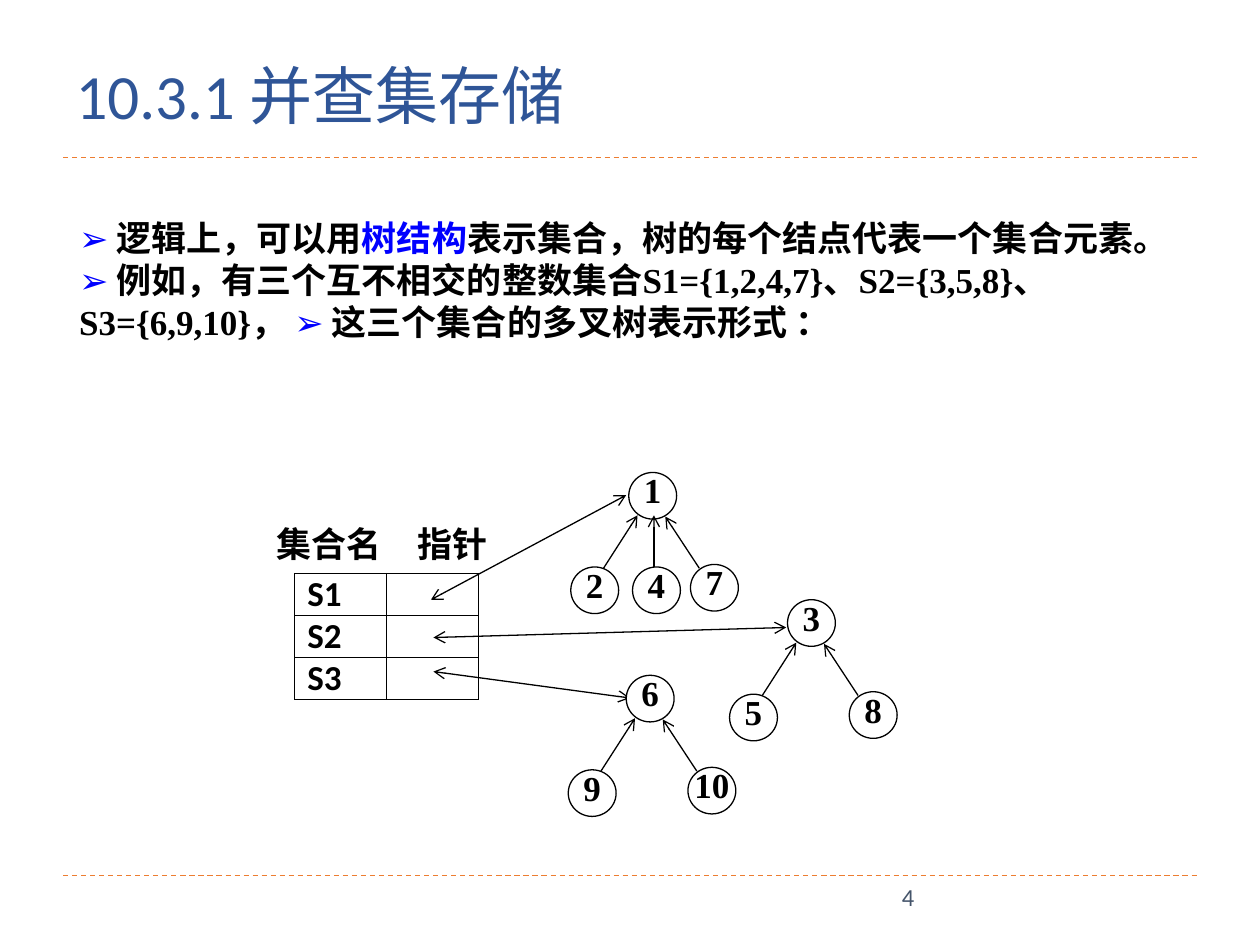
from lxml.etree import SubElement
from pptx import Presentation
from pptx.dml.color import RGBColor
from pptx.enum.dml import MSO_LINE
from pptx.enum.shapes import MSO_CONNECTOR, MSO_SHAPE
from pptx.enum.text import MSO_ANCHOR, PP_ALIGN
from pptx.oxml.ns import qn
from pptx.util import Inches, Pt

BLACK, BLUE, WHITE = "000000", "0000FF", "FFFFFF"
SERIF, SANS, CJK = "Times New Roman", "Calibri", "Noto Sans CJK SC"

TITLE = "10.3.1 并查集存储"
BODY = [
    [("➢ ", BLUE), ("逻辑上，可以用", BLACK), ("树结构", BLUE),
     ("表示集合，树的每个结点代表一个集合元素。", BLACK)],
    [("➢ ", BLUE),
     ("例如，有三个互不相交的整数集合S1={1,2,4,7}、S2={3,5,8}、S3={6,9,10}，", BLACK),
     (" ➢ ", BLUE), ("这三个集合的多叉树表示形式 ：", BLACK)],
]
PAGE = "4"
RULES = [1.25, 6.95]
HEADINGS = [("集合名", 2.11, 1.01), ("指针", 3.2, 0.78)]
SETS = ["S1", "S2", "S3"]
POINTERS = [
    (3.42, 4.76, 4.97, 3.93),
    (3.44, 5.06, 6.24, 4.98),
    (3.44, 5.33, 5, 5.54),
]
TREES = [
    ("1", 4.99, 3.75, {"left": "2", "middle": "4", "right": "7"}),
    ("3", 6.25, 4.76, {"left": "5", "right": "8"}),
    ("6", 4.97, 5.36, {"left": "9", "right": "10"}),
]
CHILD_OFFSETS = {"left": (-0.46, 0.75), "middle": (0.03, 0.75), "right": (0.49, 0.73)}
EDGE_OFFSETS = {
    "left": (0.07, 0.34, -0.2, 0.76),
    "middle": (0.2, 0.34, 0.2, 0.75),
    "right": (0.29, 0.35, 0.56, 0.76),
}


def rgb(color):
    return RGBColor.from_string(color)


def write(p, text, size=20, name=SERIF, color=BLACK, bold=True):
    r = p.add_run()
    r.text = text
    for key, value in {"size": Pt(size), "name": name, "bold": bold}.items():
        setattr(r.font, key, value)
    r.font.color.rgb = rgb(color)
    SubElement(r.font._element, qn("a:ea"), typeface=SANS)


def set_frame(tf, **formats):
    for key, value in formats.items():
        setattr(tf, key, value)
    return tf


def no_margins():
    return {f"margin_{side}": 0 for side in ("left", "right", "top", "bottom")}


def add_text(s, x, y, w, h, **formats):
    box = s.shapes.add_textbox(Inches(x), Inches(y), Inches(w), Inches(h))
    return set_frame(box.text_frame, word_wrap=True, **formats)


def add_line(s, x1, y1, x2, y2, color=BLACK, ends=(), dash=None):
    line = s.shapes.add_connector(
        MSO_CONNECTOR.STRAIGHT, Inches(x1), Inches(y1), Inches(x2), Inches(y2))
    line.line.color.rgb = rgb(color)
    line.line.width = Pt(0.75)
    if dash:
        line.line.dash_style = dash
    for end in ends:
        SubElement(line.line._get_or_add_ln(), qn(f"a:{end}"), type="arrow")
    SubElement(line._element.spPr, qn("a:effectLst"))


def add_node(s, label, x, y):
    sp = s.shapes.add_shape(
        MSO_SHAPE.OVAL, Inches(x), Inches(y), Inches(0.38), Inches(0.37))
    sp.shadow.inherit = False
    sp.fill.solid()
    sp.fill.fore_color.rgb = rgb(WHITE)
    sp.line.color.rgb = rgb(BLACK)
    sp.line.width = Pt(0.75)
    tf = set_frame(sp.text_frame, word_wrap=False,
                   vertical_anchor=MSO_ANCHOR.MIDDLE, **no_margins())
    p = tf.paragraphs[0]
    p.alignment = PP_ALIGN.CENTER
    p.line_spacing = 0.64
    write(p, label)


def add_tree(s, root, x, y, children):
    add_node(s, root, x, y)
    for side, label in children.items():
        dx, dy = CHILD_OFFSETS[side]
        add_node(s, label, x + dx, y + dy)
    for side in children:
        x1, y1, x2, y2 = EDGE_OFFSETS[side]
        add_line(s, x + x1, y + y1, x + x2, y + y2, ends=["headEnd"])


def style_cell(cell):
    set_frame(cell, **{**no_margins(), "margin_left": Inches(0.1)})
    tcPr = cell._tc.get_or_add_tcPr()
    for edge in ("lnL", "lnR", "lnT", "lnB"):
        ln = SubElement(tcPr, qn(f"a:{edge}"), w=str(Pt(0.75)))
        fill = SubElement(ln, qn("a:solidFill"))
        SubElement(fill, qn("a:srgbClr"), val=BLACK)
    cell.fill.solid()
    cell.fill.fore_color.rgb = rgb(WHITE)


def add_set_table(s):
    table = s.shapes.add_table(
        len(SETS), 2, Inches(2.34), Inches(4.55), Inches(1.46), Inches(0.99)).table
    table.first_row = table.horz_banding = False
    for row, label in zip(table.rows, SETS):
        for cell in row.cells:
            style_cell(cell)
            cell.text_frame.paragraphs[0].font.size = Pt(16)
        write(row.cells[0].text_frame.paragraphs[0], label, name=SANS)


def main():
    prs = Presentation()
    prs.slide_width, prs.slide_height = Inches(10), Inches(7.5)
    s = prs.slides.add_slide(prs.slide_layouts[6])

    for y in RULES:
        add_line(s, 0.5, y, 9.5, y, color="ED7D31", dash=MSO_LINE.DASH)

    tf = add_text(s, 0.37, 0.4, 6.69, 0.71, margin_left=Inches(0.23))
    write(tf.paragraphs[0], TITLE, 36, SANS, "2F5597", False)

    tf = add_text(s, 0.53, 1.67, 9.47, 1.11)
    for i, runs in enumerate(BODY):
        p = tf.add_paragraph() if i else tf.paragraphs[0]
        for text, color in runs:
            write(p, text, color=color)

    for text, x, w in HEADINGS:
        tf = add_text(s, x, 4.14, w, 0.34,
                      vertical_anchor=MSO_ANCHOR.MIDDLE, **no_margins())
        tf.paragraphs[0].alignment = PP_ALIGN.CENTER
        write(tf.paragraphs[0], text, name=CJK)

    add_set_table(s)
    for pointer in POINTERS:
        add_line(s, *pointer, ends=["headEnd", "tailEnd"])
    for tree in TREES:
        add_tree(s, *tree)

    tf = add_text(s, 7.06, 6.95, 2.25, 0.4)
    write(tf.paragraphs[0], PAGE, 14, SANS, "44546A", False)

    prs.save("out.pptx")


if __name__ == "__main__":
    main()
